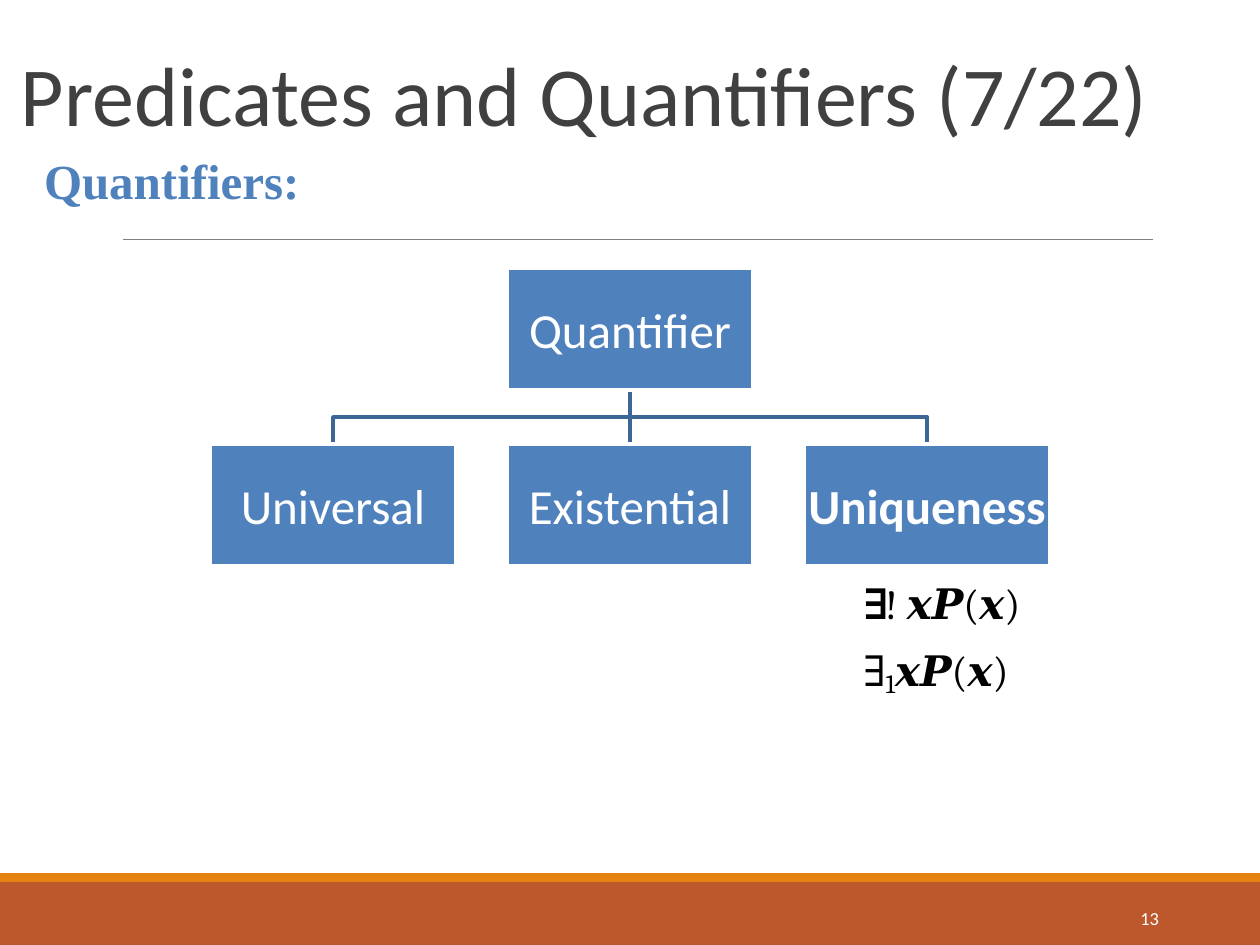
from pptx import Presentation
from pptx.dml.color import RGBColor
from pptx.enum.shapes import MSO_CONNECTOR, MSO_SHAPE
from pptx.enum.text import MSO_ANCHOR, PP_ALIGN
from pptx.oxml.ns import qn
from pptx.util import Pt
from lxml import etree

RECT = MSO_SHAPE.RECTANGLE
STRAIGHT = MSO_CONNECTOR.STRAIGHT
TOP, MIDDLE, BOTTOM = MSO_ANCHOR.TOP, MSO_ANCHOR.MIDDLE, MSO_ANCHOR.BOTTOM
LEFT, CENTER, RIGHT = PP_ALIGN.LEFT, PP_ALIGN.CENTER, PP_ALIGN.RIGHT

WHITE = RGBColor(0xFF, 0xFF, 0xFF)
BLACK = RGBColor(0x00, 0x00, 0x00)
GRAY = RGBColor(0x80, 0x80, 0x80)
DARK = RGBColor(0x40, 0x40, 0x40)
BLUE = RGBColor(0x4F, 0x81, 0xBC)
NAVY = RGBColor(0x3C, 0x66, 0x95)
RUST = RGBColor(0xBD, 0x58, 0x2C)
ORANGE = RGBColor(0xE4, 0x83, 0x12)

PX = 914400 / 126


def px(*values):
    return [round(v * PX) for v in values]


def write(sp, text, size, color, font="Calibri", bold=False, align=LEFT,
          anchor=TOP, wrap=True, before=0, more=False):
    tf = sp.text_frame
    tf.word_wrap = wrap
    tf.vertical_anchor = anchor
    tf.margin_left = tf.margin_top = tf.margin_right = tf.margin_bottom = 0
    p = tf.add_paragraph() if more else tf.paragraphs[0]
    p.alignment = align
    p.space_before = Pt(before)
    for part in [text] if isinstance(text, str) else text:
        r = p.add_run()
        r.text = part
        r.font.name = font
        r.font.size = Pt(size)
        r.font.bold = bold
        r.font.color.rgb = color
    return p


prs = Presentation()
prs.slide_width, prs.slide_height = px(1260, 945)
s = prs.slides.add_slide(prs.slide_layouts[5])

for y, h, color in [(882, 63, RUST), (873, 9, ORANGE)]:
    sp = s.shapes.add_shape(RECT, *px(0, y, 1260, h))
    sp.shadow.inherit = False
    sp.fill.solid()
    sp.fill.fore_color.rgb = color
    sp.line.fill.background()

rule = s.shapes.add_connector(STRAIGHT, *px(123, 239, 1153, 239))
trunk = s.shapes.add_connector(STRAIGHT, *px(630, 390, 630, 444))
for cxn, color, width in [(rule, GRAY, 0.5), (trunk, NAVY, 2)]:
    cxn.line.color.rgb = color
    cxn.line.width = Pt(width)
    etree.SubElement(cxn._element.spPr, qn("a:effectLst"))

fb = s.shapes.build_freeform(333, 444, scale=PX)
fb.add_line_segments([(333, 417), (927, 417), (927, 444)], close=False)
branch = fb.convert_to_shape()
branch.shadow.inherit = False
branch.fill.background()
branch.line.color.rgb = NAVY
branch.line.width = Pt(2)

title = s.shapes.title
title.left, title.top, title.width, title.height = px(21, 39, 1145, 104)
write(title, "Predicates and Quantifiers (7/22)", 48, DARK, anchor=BOTTOM)

sp = s.shapes.add_textbox(*px(44, 151, 260, 62))
write(sp, "Quantifiers:", 28, BLUE, font="Times New Roman", bold=True, before=1)

boxes = {}
for name, col, y in [("Quantifier", 1, 268), ("Universal", 0, 444),
                     ("Existential", 1, 444), ("Uniqueness", 2, 444)]:
    sp = s.shapes.add_shape(RECT, *px(507 + 297 * (col - 1), y, 246, 122))
    sp.shadow.inherit = False
    sp.fill.solid()
    sp.fill.fore_color.rgb = BLUE
    sp.line.color.rgb = WHITE
    sp.line.width = Pt(2)
    write(sp, name, 28, WHITE, bold=name == "Uniqueness", align=CENTER,
          anchor=MIDDLE, wrap=False)
    boxes[name] = sp
trunk.begin_connect(boxes["Quantifier"], 2)
trunk.end_connect(boxes["Existential"], 0)

sp = s.shapes.add_textbox(*px(863, 578, 170, 115))
write(sp, "∃! 𝒙𝑷(𝒙)", 24, BLACK, font="Cambria", before=8)
p = write(sp, ["∃", "1", "𝒙𝑷(𝒙)"], 24, BLACK, font="Cambria", before=7, more=True)
sub = p.runs[1].font
sub.size = Pt(26)
sub._element.set("baseline", "-16000")

sp = s.shapes.add_textbox(*px(1023, 890, 136, 50))
p = write(sp, "13", 10.5, WHITE, align=RIGHT, anchor=MIDDLE)
p.line_spacing = Pt(16)

prs.save("out.pptx")
